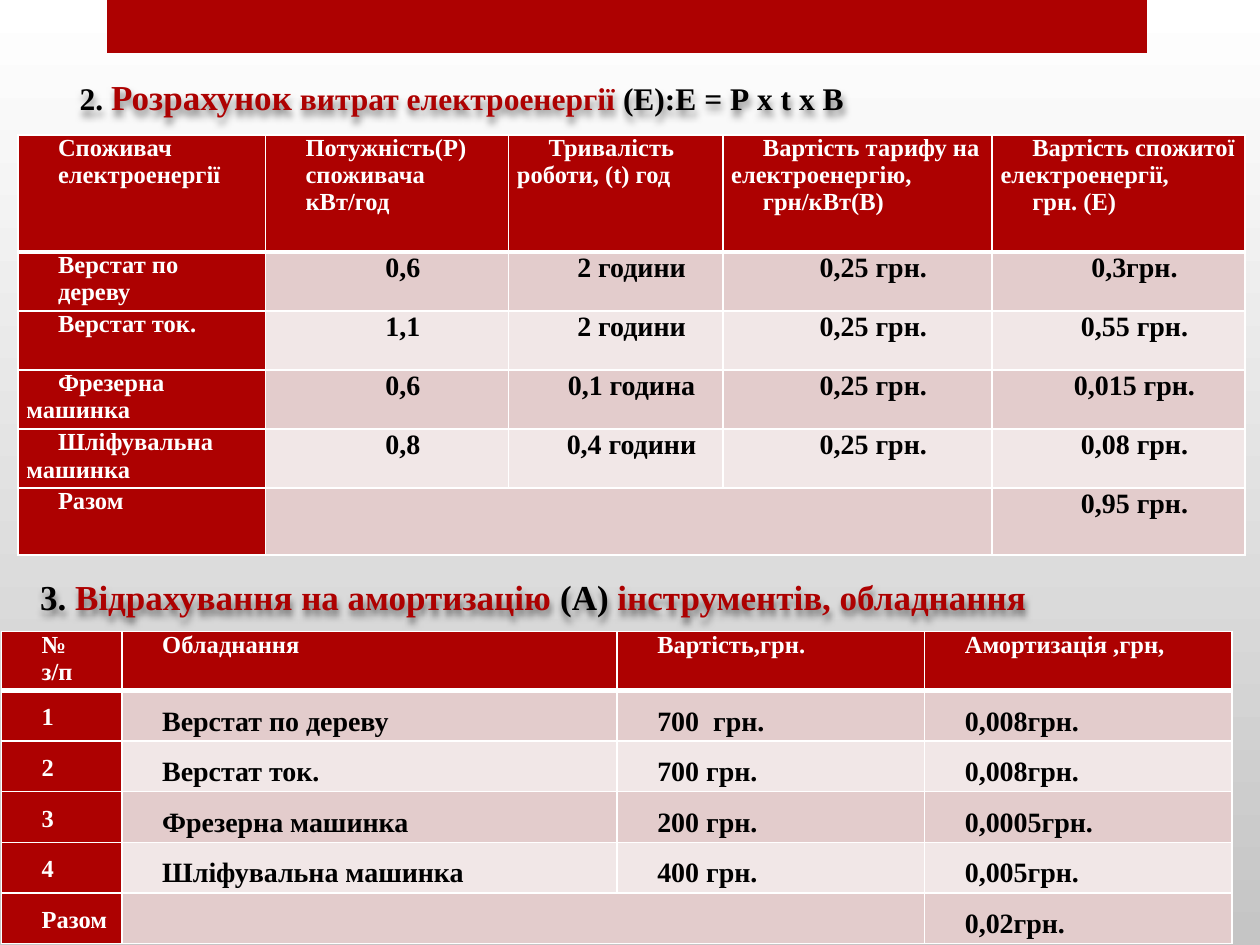
from lxml import etree
from pptx import Presentation
from pptx.dml.color import RGBColor
from pptx.enum.shapes import MSO_SHAPE
from pptx.enum.text import PP_ALIGN
from pptx.oxml import parse_xml
from pptx.oxml.ns import nsdecls, qn
from pptx.util import Cm, Pt

FONT = "Times New Roman"
COLORS = {
    "red": "AD0101", "black": "000000", "white": "FFFFFF",
    "band_dark": "E3CCCC", "band_light": "F1E7E7", "background_end": "C5C5C5",
}

# Each heading run: text, size, colour
ENERGY_HEADING = [
    ("2. ", 18, "black"),
    ("Розрахунок", 20, "red"),
    (" витрат електроенергії ", 18, "red"),
    ("(Е):Е = Р х t х В", 18, "black"),
]
DEPRECIATION_HEADING = [
    ("3.", 20, "black"),
    (" Відрахування на амортизацію ", 20, "red"),
    ("(А)", 20, "black"),
    (" інструментів, обладнання", 20, "red"),
]

# A line break inside a cell starts a new paragraph
ENERGY_ROWS = [
    ("Споживач\nелектроенергії", "Потужність(Р)\nспоживача\nкВт/год",
     "Тривалість роботи, (t) год",
     "Вартість тарифу на електроенергію,\nгрн/кВт(В)",
     "Вартість спожитої електроенергії,\nгрн. (Е)"),
    ("Верстат по\nдереву", "0,6", "2 години", "0,25 грн.", "0,3грн."),
    ("Верстат ток.", "1,1", "2 години", "0,25 грн.", "0,55 грн."),
    ("Фрезерна машинка", "0,6", "0,1 година", "0,25 грн.", "0,015 грн."),
    ("Шліфувальна машинка", "0,8", "0,4 години", "0,25 грн.", "0,08 грн."),
    ("Разом", "", "", "", "0,95 грн."),
]
DEPRECIATION_ROWS = [
    ("№\nз/п", "Обладнання", "Вартість,грн.", "Амортизація ,грн,"),
    ("1", "Верстат по дереву", "700  грн.", "0,008грн."),
    ("2", "Верстат ток.", "700 грн.", "0,008грн."),
    ("3", "Фрезерна машинка", "200 грн.", "0,0005грн."),
    ("4", "Шліфувальна машинка", "400 грн.", "0,005грн."),
    ("Разом", "", "", "0,02грн."),
]


def color(name):
    return RGBColor.from_string(COLORS[name])


def set_indent(paragraph, margin, first_line):
    properties = paragraph._p.get_or_add_pPr()
    properties.set("marL", str(Cm(margin)))
    properties.set("indent", str(Cm(first_line)))


def set_borders(cell, top, bottom):
    """Draw white cell borders; top and bottom widths are in points."""
    properties = cell._tc.get_or_add_tcPr()
    widths = {"lnL": 1, "lnR": 1, "lnT": top, "lnB": bottom}
    for position, (side, width) in enumerate(widths.items()):
        line = etree.Element(qn(f"a:{side}"), w=str(Pt(width)))
        fill = etree.SubElement(line, qn("a:solidFill"))
        etree.SubElement(fill, qn("a:srgbClr"), val=COLORS["white"])
        properties.insert(position, line)


def add_heading(slide, left, top, width, runs, align, margin=0):
    box = slide.shapes.add_textbox(Cm(left), Cm(top), Cm(width), Cm(1.88))
    box._element.spPr.append(parse_xml(
        f'<a:effectLst {nsdecls("a")}>'
        '<a:outerShdw blurRad="50800" dist="38100" dir="5400000">'
        '<a:srgbClr val="000000"><a:alpha val="50000"/></a:srgbClr>'
        '</a:outerShdw></a:effectLst>'))
    box.text_frame.word_wrap = True
    paragraph = box.text_frame.paragraphs[0]
    paragraph.alignment = align
    set_indent(paragraph, margin, 0)
    paragraph.font.name = FONT
    paragraph.font.bold = True
    for text, size, color_name in runs:
        run = paragraph.add_run()
        run.text = text
        run.font.name = FONT
        run.font.bold = True
        run.font.size = Pt(size)
        run.font.color.rgb = color(color_name)


def fill_cell(cell, text, fill, is_label, align, spacing):
    cell.fill.solid()
    cell.fill.fore_color.rgb = color(fill)
    cell.margin_left = cell.margin_right = Cm(0.17)
    cell.margin_top = cell.margin_bottom = 0
    cell.text = text
    for paragraph in cell.text_frame.paragraphs:
        set_indent(paragraph, 0, 0.64)
        paragraph.alignment = align
        paragraph.line_spacing = spacing
        paragraph.font.name = FONT
        paragraph.font.bold = True
        paragraph.font.size = Pt(14 if is_label else 16)
        paragraph.font.color.rgb = color("white" if is_label else "black")


def add_cost_table(slide, left, top, widths, heights, rows, value_align, spacing):
    """Add a table with red labels, banded values and a merged total row."""
    table = slide.shapes.add_table(
        len(rows), len(widths), Cm(left), Cm(top),
        Cm(sum(widths)), Cm(sum(heights))).table
    for column, width in zip(table.columns, widths):
        column.width = Cm(width)
    for row_index, texts in enumerate(rows):
        table.rows[row_index].height = Cm(heights[row_index])
        band = "band_dark" if row_index % 2 else "band_light"
        for column_index, text in enumerate(texts):
            is_label = row_index == 0 or column_index == 0
            cell = table.cell(row_index, column_index)
            fill_cell(cell, text, "red" if is_label else band, is_label,
                      PP_ALIGN.LEFT if is_label else value_align,
                      spacing if row_index else 1)
            set_borders(cell, top=3 if row_index == 1 else 1,
                        bottom=3 if row_index == 0 else 1)
    last = len(rows) - 1
    table.cell(last, 1).merge(table.cell(last, len(widths) - 2))


def main():
    presentation = Presentation()
    presentation.slide_width, presentation.slide_height = Cm(25.4), Cm(19.05)
    slide = presentation.slides.add_slide(presentation.slide_layouts[6])

    background = slide.background.fill
    background.gradient()
    background.gradient_angle = 270
    for stop, position, name in zip(background.gradient_stops, (0, 1),
                                    ("white", "background_end")):
        stop.position = position
        stop.color.rgb = color(name)

    bar = slide.shapes.add_shape(MSO_SHAPE.RECTANGLE, Cm(2.16), 0, Cm(20.96), Cm(1.07))
    bar.shadow.inherit = False
    bar.fill.solid()
    bar.fill.fore_color.rgb = color("red")
    bar.line.fill.background()

    add_cost_table(slide, 0.36, 2.72, [4.99, 4.9, 4.32, 5.43, 5.1],
                   [2.36] + [1.19] * 4 + [1.35], ENERGY_ROWS, PP_ALIGN.CENTER, 1)
    add_heading(slide, -2.49, 1.4, 23.6, ENERGY_HEADING, PP_ALIGN.CENTER)
    add_cost_table(slide, 0.03, 12.73, [2.43, 9.98, 6.2, 6.2],
                   [1.19] + [1.02] * 5, DEPRECIATION_ROWS, PP_ALIGN.LEFT, 1.5)
    add_heading(slide, -0.71, 11.48, 26.57, DEPRECIATION_HEADING, PP_ALIGN.LEFT, 1.27)

    presentation.save("out.pptx")


if __name__ == "__main__":
    main()
